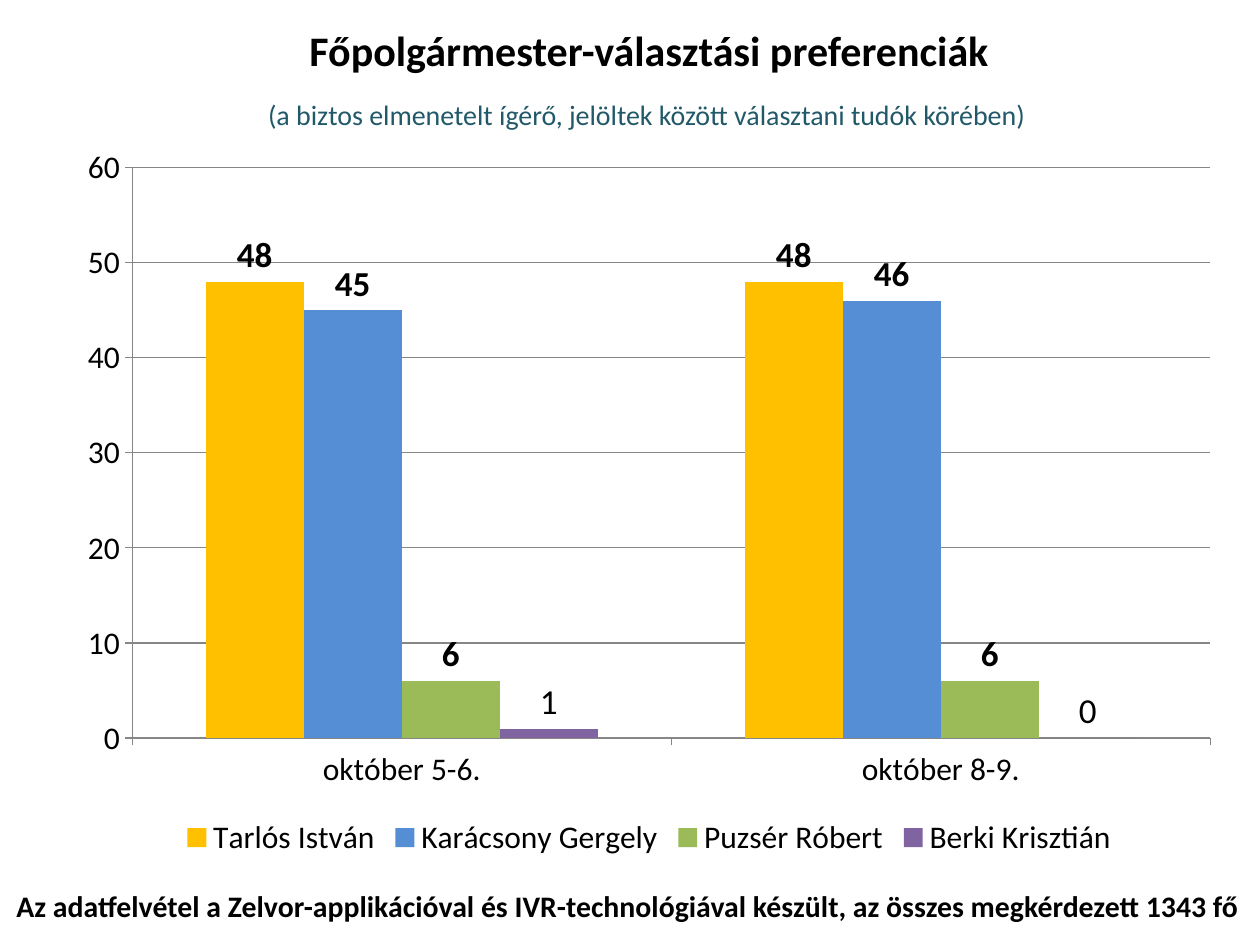
from pptx import Presentation
from pptx.chart.data import CategoryChartData
from pptx.dml.color import RGBColor
from pptx.enum.chart import XL_CHART_TYPE, XL_LABEL_POSITION, XL_LEGEND_POSITION, XL_TICK_MARK
from pptx.enum.text import MSO_ANCHOR, PP_ALIGN
from pptx.util import Cm, Pt

FONT = "Calibri"
BLACK = "000000"
GRAY = "868686"
CATEGORIES = ["október 5-6.", "október 8-9."]
# name, values, colour, bold labels
CANDIDATES = [
    ("Tarlós István", (48, 48), "FFC000", True),
    ("Karácsony Gergely", (45, 46), "558ED5", True),
    ("Puzsér Róbert", (6, 6), "9BBB59", True),
    ("Berki Krisztián", (1, 0), "8064A2", False),
]


def color(hex_value):
    return RGBColor.from_string(hex_value)


def format_font(font, size, hex_value=BLACK, bold=False):
    font.name = FONT
    font.size = Pt(size)
    font.bold = bold
    font.color.rgb = color(hex_value)


def add_text(slide, text, left, top, width, height, *, size, hex_value=BLACK,
             bold=False, align=PP_ALIGN.LEFT, anchor=MSO_ANCHOR.TOP):
    shape = slide.shapes.add_textbox(Cm(left), Cm(top), Cm(width), Cm(height))
    frame = shape.text_frame
    frame.word_wrap = True
    frame.vertical_anchor = anchor
    paragraph = frame.paragraphs[0]
    paragraph.alignment = align
    run = paragraph.add_run()
    run.text = text
    format_font(run.font, size, hex_value, bold)


def format_axis(axis):
    axis.major_tick_mark = XL_TICK_MARK.OUTSIDE
    axis.minor_tick_mark = XL_TICK_MARK.NONE
    axis.format.line.color.rgb = color(GRAY)
    format_font(axis.tick_labels.font, 18)


def format_series(series, hex_value, bold):
    series.format.fill.solid()
    series.format.fill.fore_color.rgb = color(hex_value)
    series.invert_if_negative = False
    labels = series.data_labels
    labels.show_value = True
    labels.position = XL_LABEL_POSITION.OUTSIDE_END
    format_font(labels.font, 20, bold=bold)


def add_preference_chart(slide, left, top, width, height):
    data = CategoryChartData()
    data.categories = CATEGORIES
    for name, values, _, _ in CANDIDATES:
        data.add_series(name, values)
    chart = slide.shapes.add_chart(XL_CHART_TYPE.COLUMN_CLUSTERED, Cm(left), Cm(top),
                                   Cm(width), Cm(height), data).chart
    format_font(chart.font, 18)
    chart.has_title = False
    chart.has_legend = True
    chart.legend.position = XL_LEGEND_POSITION.BOTTOM
    chart.legend.include_in_layout = False
    format_font(chart.legend.font, 18)

    format_axis(chart.category_axis)
    value_axis = chart.value_axis
    format_axis(value_axis)
    value_axis.minimum_scale = 0
    value_axis.maximum_scale = 60
    value_axis.major_unit = 10
    value_axis.has_major_gridlines = True
    value_axis.major_gridlines.format.line.color.rgb = color(GRAY)

    plot = chart.plots[0]
    plot.gap_width = 150
    plot.overlap = 0
    plot.vary_by_categories = False
    for series, (_, _, hex_value, bold) in zip(plot.series, CANDIDATES):
        format_series(series, hex_value, bold)


def main():
    presentation = Presentation()
    presentation.slide_width = Cm(25.4)
    presentation.slide_height = Cm(19.05)
    slide = presentation.slides.add_slide(presentation.slide_layouts[6])

    add_text(slide, "Főpolgármester-választási preferenciák", 1.3, 0.08, 23.57, 1.85,
             size=24, bold=True, align=PP_ALIGN.CENTER, anchor=MSO_ANCHOR.MIDDLE)
    add_text(slide, "(a biztos elmenetelt ígérő, jelöltek között választani tudók körében)",
             1.98, 1.85, 22.12, 0.94, size=16, hex_value="215968", align=PP_ALIGN.CENTER)
    add_preference_chart(slide, 1.3, 2.7, 23.57, 14.7)
    add_text(slide, "Az adatfelvétel a Zelvor-applikációval és IVR-technológiával készült, "
             "az összes megkérdezett 1343 fő", 0.08, 17.78, 25.4, 0.99, size=17, bold=True)

    presentation.save("out.pptx")


if __name__ == "__main__":
    main()
